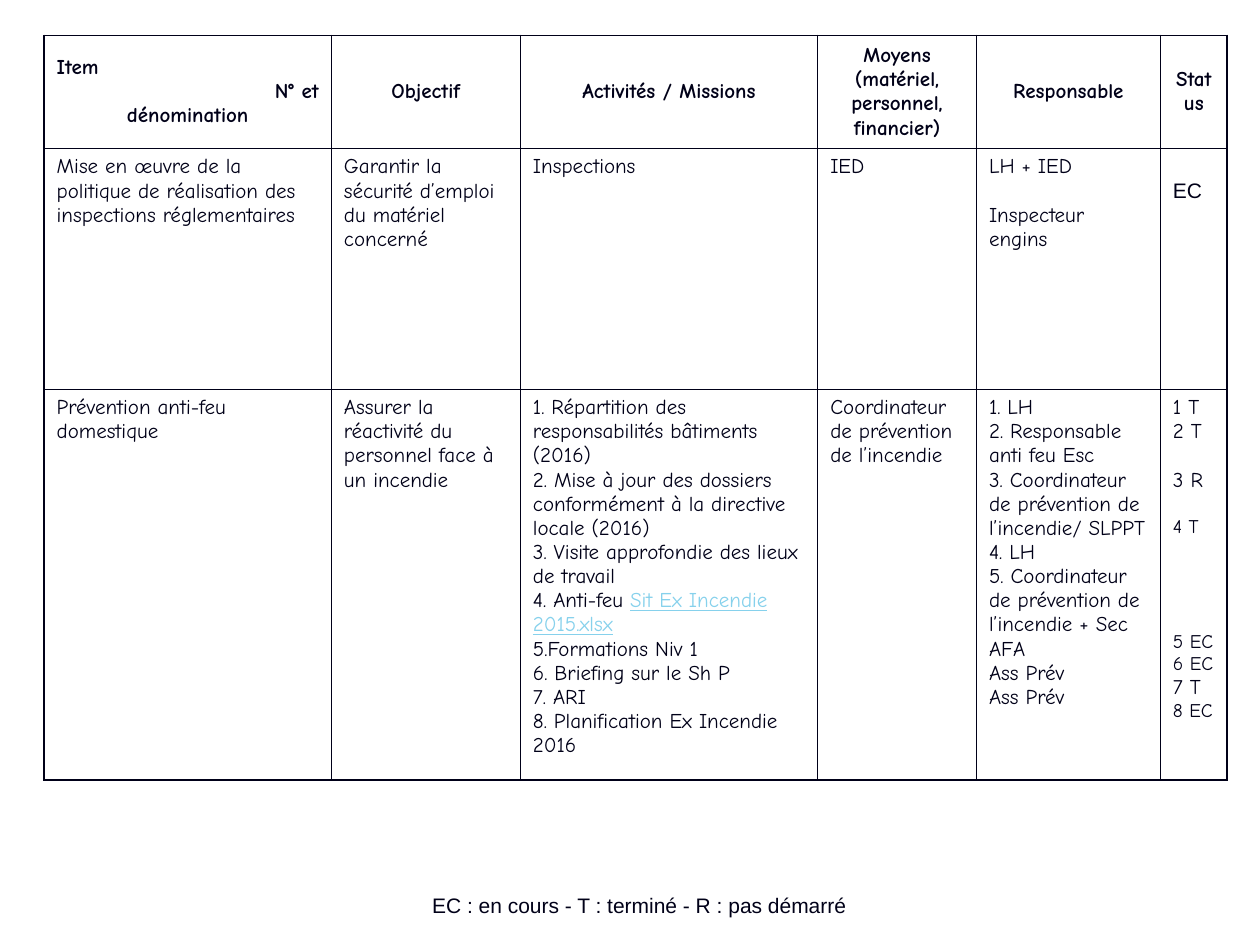
from dataclasses import dataclass
from lxml import etree
from pptx import Presentation
from pptx import util as u
from pptx.dml.color import RGBColor
from pptx.enum import text as t
from pptx.oxml import ns


@dataclass(frozen=True)
class Theme:
    ink: str = "000018"
    link: str = "86D1EC"
    body: str = "Comic Neue"
    plain: str = "Arial"
    size: float = 12
    small: float = 11
    gap: float = 13.8
    line: float = 1


TH = Theme()
WIDE, HIGH = 10, 7.5
COLS = [2.28, 1.5, 2.36, 1.26, 1.46, 0.53]
ROWS = [0.9, 1.91, 2.98]
MID, LEFT, RIGHT = t.PP_ALIGN.CENTER, t.PP_ALIGN.LEFT, t.PP_ALIGN.RIGHT

HEAD = [
    [("Item", {"align": LEFT}), ("N° et", {"align": RIGHT}), "dénomination"],
    ["Objectif"],
    ["Activités / Missions"],
    ["Moyens (matériel, personnel, financier)"],
    ["Responsable"],
    ["Status"],
]
NUM = {"num": True}
SMALL = {"size": TH.small}
CHECK = [
    ["Mise en œuvre de la politique de réalisation des inspections réglementaires"],
    ["Garantir la sécurité d’emploi du matériel concerné"],
    ["Inspections"],
    ["IED"],
    ["LH + IED", ("Inspecteur engins", {"gap": 1})],
    [("EC", {"face": TH.plain})],
]
FIRE = [
    ["Prévention anti-feu domestique"],
    ["Assurer la réactivité du personnel face à un incendie"],
    [
        (" Répartition des responsabilités bâtiments (2016)", NUM),
        (" Mise à jour des dossiers conformément à la directive locale (2016)", NUM),
        (" Visite approfondie des lieux de travail", NUM),
        (" Anti-feu ", {"num": True, "link": "Sit Ex Incendie 2015.xlsx"}),
        ("Formations Niv 1", NUM),
        (" Briefing sur le Sh P", NUM),
        (" ARI", NUM),
        (" Planification Ex Incendie 2016", NUM),
    ],
    ["Coordinateur de prévention de l’incendie"],
    [
        (" LH", NUM),
        (" Responsable anti feu Esc", NUM),
        "3. Coordinateur de prévention de l’incendie/ SLPPT",
        "4. LH",
        "5. Coordinateur de prévention de l’incendie + Sec AFA",
        "Ass Prév",
        "Ass Prév",
    ],
    [
        "1 T",
        "2 T",
        ("3 R", {"gap": 1}),
        ("4 T", {"gap": 1, **SMALL}),
        ("5 EC", {"gap": 3.83, **SMALL}),
        ("6 EC", SMALL),
        "7 T",
        ("8 EC", SMALL),
    ],
]


def put(obj, vals):
    for key, val in vals.items():
        setattr(obj, key, val)


def add_run(para, words, tone=TH.ink, **font):
    run = para.add_run()
    run.text = words
    put(run.font, font)
    run.font.color.rgb = RGBColor.from_string(tone)


def add_para(para, item, align=LEFT, bold=False):
    words, opts = (item, {}) if isinstance(item, str) else item
    para.alignment = opts.get("align", align)
    if "gap" in opts:
        para.space_before = u.Pt(opts["gap"] * TH.gap)
    if opts.get("num"):
        props = para._p.get_or_add_pPr()
        put_attrs(props, marL="0", indent="0")
        put_attrs(etree.SubElement(props, ns.qn("a:buAutoNum")), type="arabicPeriod")
    font = {
        "name": opts.get("face", TH.body),
        "size": u.Pt(opts.get("size", TH.size)),
        "bold": bold,
    }
    add_run(para, words, **font)
    if "link" in opts:
        add_run(para, opts["link"], TH.link, underline=True, **font)


def put_attrs(node, **vals):
    for key, val in vals.items():
        node.set(key, val)


def fill_text(frame, items, **style):
    for pos, item in enumerate(items):
        para = frame.add_paragraph() if pos else frame.paragraphs[0]
        add_para(para, item, **style)


def add_edges(cell):
    props = cell._tc.get_or_add_tcPr()
    for side in ("lnL", "lnR", "lnT", "lnB"):
        edge = etree.SubElement(props, ns.qn("a:" + side))
        edge.set("w", str(u.Pt(TH.line)))
        fill = etree.SubElement(edge, ns.qn("a:solidFill"))
        etree.SubElement(fill, ns.qn("a:srgbClr")).set("val", TH.ink)


def add_grid(slide):
    frame = slide.shapes.add_table(
        len(ROWS), len(COLS), u.Inches(0.35), u.Inches(0.28),
        u.Inches(sum(COLS)), u.Inches(sum(ROWS)))
    table = frame.table
    put(table, {"first_row": False, "horz_banding": False})
    for col, width in zip(table.columns, COLS):
        col.width = u.Inches(width)
    for row, high, cells in zip(table.rows, ROWS, (HEAD, CHECK, FIRE)):
        row.height = u.Inches(high)
        top = cells is HEAD
        for cell, items in zip(row.cells, cells):
            put(cell, {
                "margin_left": u.Inches(0.1),
                "margin_right": u.Inches(0.1),
                "margin_top": u.Inches(0.24 if items is CHECK[-1] else 0.05),
                "margin_bottom": u.Inches(0.05),
                "vertical_anchor": t.MSO_ANCHOR.MIDDLE if top else t.MSO_ANCHOR.TOP,
            })
            add_edges(cell)
            cell.fill.background()
            fill_text(cell.text_frame, items, align=MID if top else LEFT, bold=top)


def add_key(slide):
    box = slide.shapes.add_textbox(
        u.Inches(2.32), u.Inches(6.83), u.Inches(5.51), u.Inches(0.5))
    put(box.text_frame, {"word_wrap": True, "vertical_anchor": t.MSO_ANCHOR.BOTTOM})
    words = "EC : en cours - T : terminé - R : pas démarré"
    fill_text(box.text_frame, [(words, {"face": TH.plain})], align=MID)


def main():
    deck = Presentation()
    put(deck, {"slide_width": u.Inches(WIDE), "slide_height": u.Inches(HIGH)})
    slide = deck.slides.add_slide(deck.slide_layouts[6])
    add_key(slide)
    add_grid(slide)
    deck.save("out.pptx")


if __name__ == "__main__":
    main()
